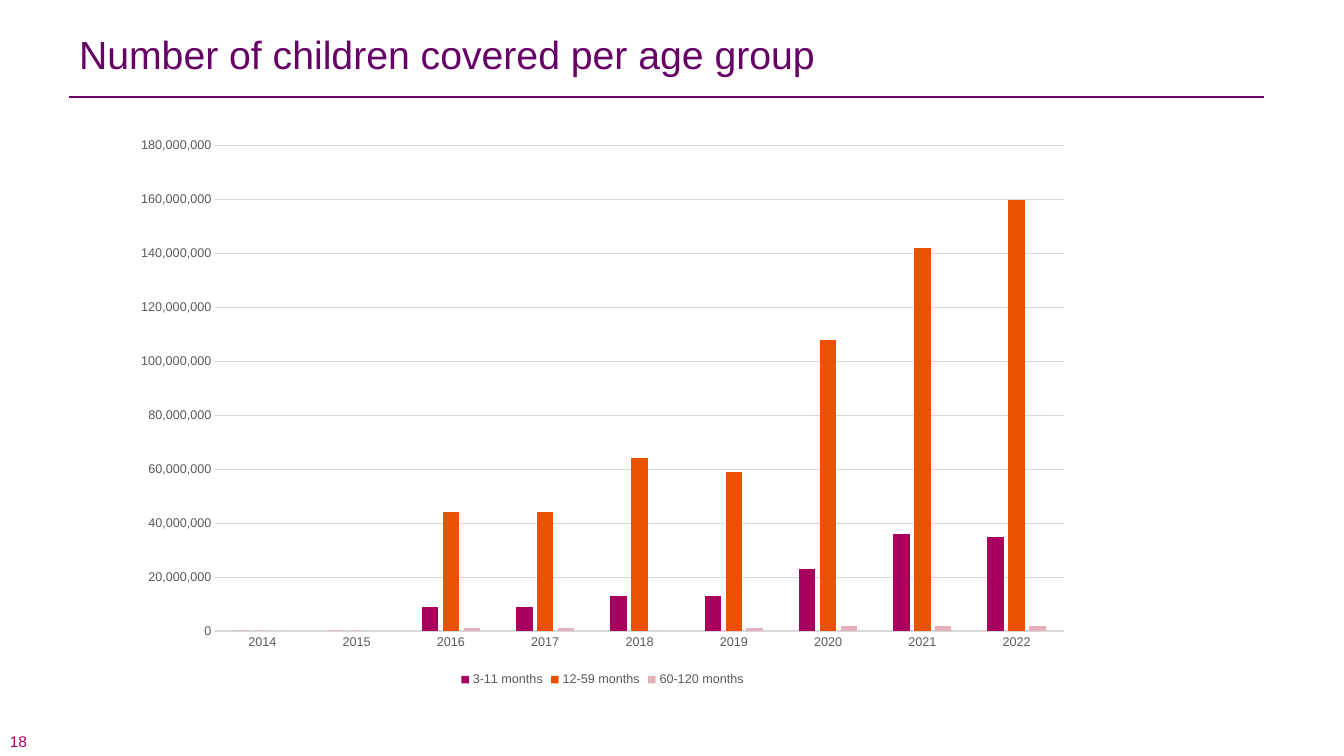
from lxml import etree
from pptx import Presentation
from pptx import util as u
from pptx.chart.data import CategoryChartData
from pptx.dml.color import RGBColor
from pptx.enum import chart as charts, shapes, text
from pptx.oxml.ns import qn

TITLE = "Number of children covered per age group"
PAGE_NUMBER = "18"
YEARS = [str(year) for year in range(2014, 2023)]
PURPLE = RGBColor(0x66, 0x00, 0x66)
MAGENTA = RGBColor(0xA7, 0x00, 0x5F)
ORANGE = RGBColor(0xEA, 0x51, 0x00)
PINK = RGBColor(0xE4, 0xB0, 0xBB)
GRAY = RGBColor(0x59, 0x59, 0x59)
GRID = RGBColor(0xD9, 0xD9, 0xD9)
MILLIONS_BY_AGE = [
    ("3-11 months", MAGENTA, [0, 0, 9, 9, 13, 13, 23, 36, 35]),
    ("12-59 months", ORANGE, [0, 0, 44, 44, 64, 59, 108, 142, 160]),
    ("60-120 months", PINK, [0, None, 1, 1, 0, 1, 2, 2, 2]),
]
FONT = "Arial"
PX_PER_INCH = 100.8


def px(*lengths):
    return [u.Inches(length / PX_PER_INCH) for length in lengths]


def style_font(font, size, color):
    font.name = FONT
    font.size = u.Pt(size)
    font.bold = False
    font.color.rgb = color


def style_line(line, color):
    line.color.rgb = color
    line.width = u.Pt(0.75)


def add_title(page):
    box = page.shapes.title
    box.left, box.top, box.width, box.height = px(69, 36, 1196, 76)
    frame = box.text_frame
    frame.text = TITLE
    frame.word_wrap = True
    frame.auto_size = text.MSO_AUTO_SIZE.NONE
    frame.vertical_anchor = text.MSO_ANCHOR.TOP
    para = frame.paragraphs[0]
    para.alignment = text.PP_ALIGN.LEFT
    para.line_spacing = u.Pt(26)
    style_font(para.runs[0].font, 28, PURPLE)


def add_rule(page):
    rule = page.shapes.add_connector(
        shapes.MSO_CONNECTOR.STRAIGHT, *px(69, 97, 1264, 97))
    rule.line.color.rgb = PURPLE
    rule.line.width = u.Pt(2)
    properties = rule._element.find(qn("p:spPr"))
    etree.SubElement(properties, qn("a:effectLst"))


def add_page_number(page):
    box = page.shapes.add_textbox(*px(0, 732, 107, 18))
    frame = box.text_frame
    frame.text = PAGE_NUMBER
    frame.word_wrap = True
    frame.margin_top = frame.margin_bottom = 0
    frame.vertical_anchor = text.MSO_ANCHOR.MIDDLE
    style_font(frame.paragraphs[0].runs[0].font, 11, MAGENTA)


def add_coverage_chart(page):
    data = CategoryChartData(number_format="#,##0")
    data.categories = YEARS
    for name, color, millions in MILLIONS_BY_AGE:
        data.add_series(name, [None if value is None else value * 1_000_000
                               for value in millions])
    chart = page.shapes.add_chart(
        charts.XL_CHART_TYPE.COLUMN_CLUSTERED, *px(122, 127, 961, 564), data).chart
    style_font(chart.font, 9, GRAY)
    chart.has_title = False
    chart.has_legend = True
    chart.legend.position = charts.XL_LEGEND_POSITION.BOTTOM
    chart.legend.include_in_layout = False
    style_font(chart.legend.font, 9, GRAY)

    plot = chart.plots[0]
    plot.vary_by_categories = False
    plot.gap_width = 219
    plot.overlap = -27
    for series, (name, color, millions) in zip(plot.series, MILLIONS_BY_AGE):
        series.invert_if_negative = False
        series.format.fill.solid()
        series.format.fill.fore_color.rgb = color

    for axis in (chart.category_axis, chart.value_axis):
        axis.major_tick_mark = axis.minor_tick_mark = charts.XL_TICK_MARK.NONE
        style_font(axis.tick_labels.font, 9, GRAY)
    style_line(chart.category_axis.format.line, GRID)

    amounts = chart.value_axis
    amounts.minimum_scale = 0
    amounts.maximum_scale = 180_000_000
    amounts.major_unit = 20_000_000
    amounts.tick_labels.number_format = "#,##0"
    amounts.tick_labels.number_format_is_linked = False
    amounts.format.line.fill.background()
    amounts.has_major_gridlines = True
    style_line(amounts.major_gridlines.format.line, GRID)


def main():
    deck = Presentation()
    deck.slide_width, deck.slide_height = px(1344, 756)
    page = deck.slides.add_slide(deck.slide_layouts[5])
    add_page_number(page)
    add_title(page)
    add_rule(page)
    add_coverage_chart(page)
    deck.save("out.pptx")


if __name__ == "__main__":
    main()
